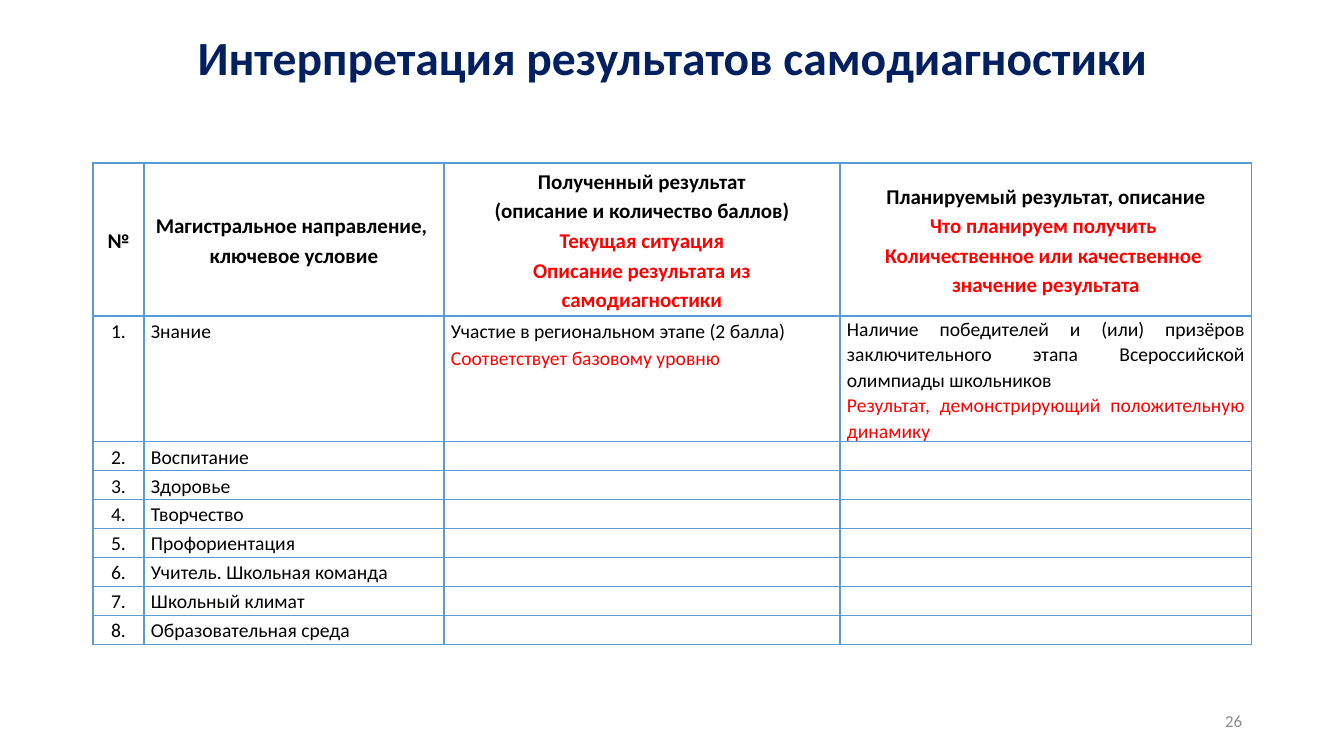
from lxml.etree import SubElement
from pptx import Presentation
from pptx.dml.color import RGBColor
from pptx.enum.text import MSO_ANCHOR, PP_ALIGN
from pptx.oxml.ns import qn
from pptx.util import Pt

EMU_PER_PX = 9071.43
FONT = "Calibri"
NAVY, BLACK, RED, GREY = "002060", "000000", "FF0000", "8C8C8C"
BORDER = "5B9BD5"

COLUMN_WIDTHS = [51, 300, 396, 412]
HEADER_HEIGHT, FIRST_HEIGHT, ROW_HEIGHT = 153, 117, 29

# Each cell is a list of (text, colour) paragraphs.
HEADER = [
    [("№", BLACK)],
    [("Магистральное направление, \nключевое условие", BLACK)],
    [("Полученный результат", BLACK),
     ("(описание и количество баллов)", BLACK),
     ("Текущая ситуация", RED),
     ("Описание результата из самодиагностики", RED)],
    [("Планируемый результат, описание", BLACK),
     ("Что планируем получить ", RED),
     ("Количественное или качественное ", RED),
     ("значение результата", RED)],
]
DIRECTIONS = ["Знание", "Воспитание", "Здоровье", "Творчество", "Профориентация",
              "Учитель. Школьная команда", "Школьный климат", "Образовательная среда"]
CURRENT_RESULT = [("Участие в региональном этапе (2 балла)", BLACK),
                  ("Соответствует базовому уровню", RED)]
PLANNED_RESULT = [
    ("Наличие победителей и (или) призёров заключительного этапа "
     "Всероссийской олимпиады школьников", BLACK),
    ("Результат, демонстрирующий положительную динамику", RED),
]


def px(length):
    return round(length * EMU_PER_PX)


def rgb(value):
    return RGBColor.from_string(value)


def write_paragraph(paragraph, text, size, color, alignment, spacing=1.0, bold=False):
    """Write text run by run, with a line break at each newline."""
    paragraph.alignment = alignment
    paragraph.line_spacing = spacing
    for index, line in enumerate(text.split("\n")):
        if index:
            paragraph.add_line_break()
        run = paragraph.add_run()
        run.text = line
        run.font.name = FONT
        run.font.size = Pt(size)
        run.font.bold = bold
        run.font.color.rgb = rgb(color)


def add_text(slide, left, top, width, height, text, size, color, alignment,
             spacing=1.0, bold=False, bottom_margin=5):
    shape = slide.shapes.add_textbox(px(left), px(top), px(width), px(height))
    frame = shape.text_frame
    frame.word_wrap = True
    frame.vertical_anchor = MSO_ANCHOR.MIDDLE
    frame.margin_top = 0
    frame.margin_bottom = px(bottom_margin)
    write_paragraph(frame.paragraphs[0], text, size, color, alignment, spacing, bold)


def set_borders(cell, bottom_width):
    properties = cell._tc.get_or_add_tcPr()
    for side, width in (("L", 1), ("R", 1), ("T", 1), ("B", bottom_width)):
        line = SubElement(properties, qn(f"a:ln{side}"), w=str(Pt(width)))
        fill = SubElement(line, qn("a:solidFill"))
        SubElement(fill, qn("a:srgbClr"), val=BORDER)


def fill_cell(cell, paragraphs, alignment, size=14, spacing=1.15, header=False):
    set_borders(cell, 2 if header else 1)
    cell.fill.background()
    cell.margin_left = cell.margin_right = px(7)
    cell.margin_top = cell.margin_bottom = 0
    cell.vertical_anchor = MSO_ANCHOR.MIDDLE if header else MSO_ANCHOR.TOP
    frame = cell.text_frame
    for index, (text, color) in enumerate(paragraphs):
        paragraph = frame.add_paragraph() if index else frame.paragraphs[0]
        write_paragraph(paragraph, text, size, color, alignment, spacing, header)
    if not paragraphs:
        # The end mark sets the height of an empty cell.
        SubElement(frame.paragraphs[0]._p, qn("a:endParaRPr"), sz=str(size * 100))


def add_results_table(slide, left, top):
    heights = [HEADER_HEIGHT, FIRST_HEIGHT] + [ROW_HEIGHT] * (len(DIRECTIONS) - 1)
    table = slide.shapes.add_table(
        len(heights), len(COLUMN_WIDTHS), px(left), px(top),
        px(sum(COLUMN_WIDTHS)), px(sum(heights))).table
    table.first_row = table.horz_banding = False
    for column, width in zip(table.columns, COLUMN_WIDTHS):
        column.width = px(width)
    for row, height in zip(table.rows, heights):
        row.height = px(height)

    for column, paragraphs in enumerate(HEADER):
        fill_cell(table.cell(0, column), paragraphs, PP_ALIGN.CENTER, size=15, header=True)
    for number, direction in enumerate(DIRECTIONS, start=1):
        current, planned = (CURRENT_RESULT, PLANNED_RESULT) if number == 1 else ([], [])
        fill_cell(table.cell(number, 0), [(f"{number}.", BLACK)], PP_ALIGN.CENTER)
        fill_cell(table.cell(number, 1), [(direction, BLACK)], PP_ALIGN.JUSTIFY)
        fill_cell(table.cell(number, 2), current, PP_ALIGN.JUSTIFY)
        fill_cell(table.cell(number, 3), planned, PP_ALIGN.JUSTIFY, spacing=1.07)


def main():
    presentation = Presentation()
    presentation.slide_width = px(1344)
    presentation.slide_height = px(756)
    slide = presentation.slides.add_slide(presentation.slide_layouts[6])
    add_text(slide, 93, 40, 1159, 92, "Интерпретация результатов самодиагностики",
             34, NAVY, PP_ALIGN.CENTER, spacing=0.9, bold=True, bottom_margin=52)
    add_results_table(slide, 93, 163)
    add_text(slide, 950, 701, 302, 40, "26", 12, GREY, PP_ALIGN.RIGHT, bottom_margin=0)
    presentation.save("out.pptx")


if __name__ == "__main__":
    main()
